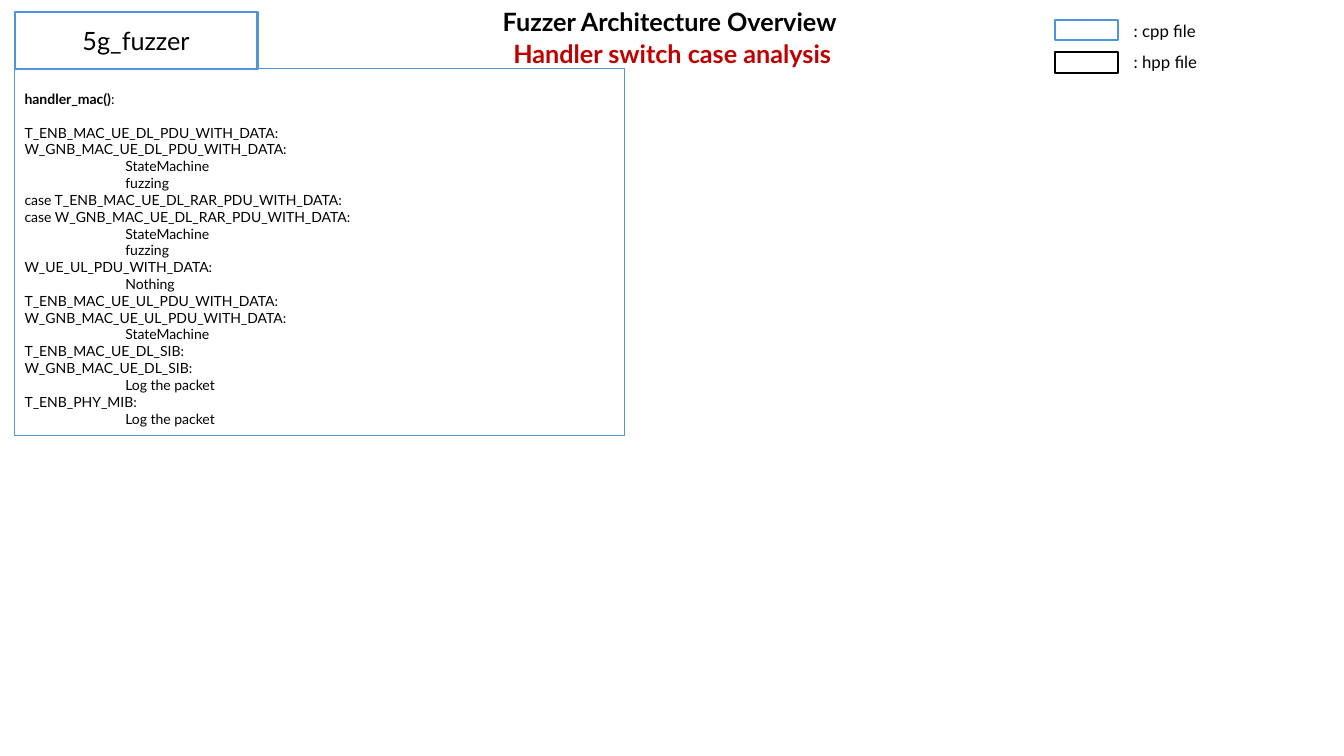
from pptx import Presentation
from pptx.dml.color import RGBColor
from pptx.enum.shapes import MSO_SHAPE as Shape
from pptx.enum.text import MSO_ANCHOR as Anchor, MSO_AUTO_SIZE as AutoSize, PP_ALIGN as Align
from pptx.util import Cm, Pt

BLACK = RGBColor(0x00, 0x00, 0x00)
BLUE = RGBColor(0x4E, 0x95, 0xD9)
RED = RGBColor(0xC0, 0x00, 0x00)
FONT = "Lato"

# Content
MODULE = "5g_fuzzer"
HANDLER = "handler_mac()"
CASES = [  # case labels, then the actions they share
    (["T_ENB_MAC_UE_DL_PDU_WITH_DATA:", "W_GNB_MAC_UE_DL_PDU_WITH_DATA:"],
     ["StateMachine", "fuzzing"]),
    (["case T_ENB_MAC_UE_DL_RAR_PDU_WITH_DATA:", "case W_GNB_MAC_UE_DL_RAR_PDU_WITH_DATA:"],
     ["StateMachine", "fuzzing"]),
    (["W_UE_UL_PDU_WITH_DATA:"], ["Nothing"]),
    (["T_ENB_MAC_UE_UL_PDU_WITH_DATA:", "W_GNB_MAC_UE_UL_PDU_WITH_DATA:"],
     ["StateMachine"]),
    (["T_ENB_MAC_UE_DL_SIB:", "W_GNB_MAC_UE_DL_SIB:"], ["Log the packet"]),
    (["T_ENB_PHY_MIB:"], ["Log the packet"]),
]
TITLES = [  # text, box in cm, colour, alignment, wrap
    ("Fuzzer Architecture Overview", (12.42, 0.03, 9.02, 1.02), BLACK, Align.LEFT, False),
    ("Handler switch case analysis", (12.24, 0.84, 9.4, 1.02), RED, Align.CENTER, True),
]
LEGEND = [  # text, line colour, swatch top, label top, wrap
    (": cpp file", BLUE, 0.5, 0.4, False),
    (": hpp file", BLACK, 1.32, 1.17, True),
]

presentation = Presentation()
presentation.slide_width, presentation.slide_height = Cm(33.87), Cm(19.05)
slide = presentation.slides.add_slide(presentation.slide_layouts[6])


def set_format(target, values):
    for name, value in values.items():
        setattr(target, name, value)


def add_run(paragraph, text, size, color=BLACK, bold=False):
    run = paragraph.add_run()
    run.text = text
    set_format(run.font, {"name": FONT, "size": Pt(size), "bold": bold})
    run.font.color.rgb = color


def add_frame(box, color, width):
    shape = slide.shapes.add_shape(Shape.RECTANGLE, *map(Cm, box))
    shape.shadow.inherit = False
    shape.fill.background()
    shape.line.color.rgb = color
    shape.line.width = Pt(width)
    return shape


def add_label(text, box, size, color=BLACK, bold=False, align=Align.LEFT, wrap=True):
    frame = slide.shapes.add_textbox(*map(Cm, box)).text_frame
    set_format(frame, {"word_wrap": wrap, "auto_size": AutoSize.SHAPE_TO_FIT_TEXT})
    frame.paragraphs[0].alignment = align
    add_run(frame.paragraphs[0], text, size, color, bold)


# Module name
module = add_frame((0.37, 0.3, 6.12, 1.43), BLUE, 1.5).text_frame
module.vertical_anchor = Anchor.MIDDLE
module.paragraphs[0].alignment = Align.CENTER
add_run(module.paragraphs[0], MODULE, 18)

# Legend
for text, color, swatch_top, label_top, wrap in LEGEND:
    add_frame((26.59, swatch_top, 1.59, 0.52), color, 1.5)
    add_label(text, (28.32, label_top, 2.1, 0.77), 12, wrap=wrap)

# Handler cases
cases = add_frame((0.37, 1.73, 15.38, 9.24), BLUE, 0.75).text_frame
set_format(cases, {"word_wrap": True, "vertical_anchor": Anchor.TOP, "margin_top": Cm(0.55)})
heading = cases.paragraphs[0]
set_format(heading, {"alignment": Align.LEFT, "space_after": Pt(12)})
add_run(heading, HANDLER, 10, bold=True)
add_run(heading, ":", 10)
for labels, actions in CASES:
    for indent, lines in ((0, labels), (2.54, actions)):
        for line in lines:
            paragraph = cases.add_paragraph()
            paragraph.alignment = Align.LEFT
            paragraph._p.get_or_add_pPr().set("marL", str(Cm(indent)))
            add_run(paragraph, line, 10)

# Titles
for text, box, color, align, wrap in TITLES:
    add_label(text, box, 18, color, True, align, wrap)

presentation.save("out.pptx")
